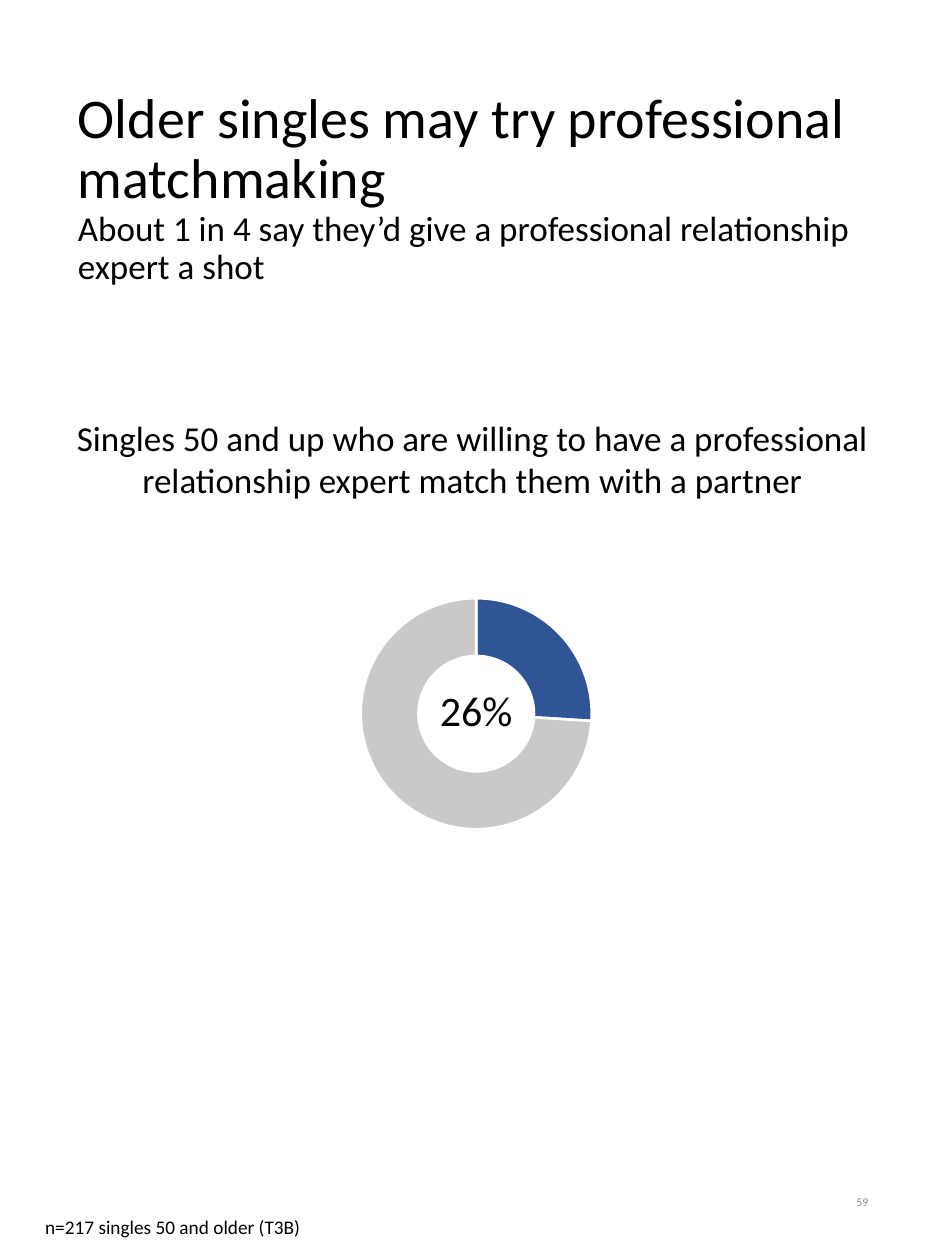
from pptx import Presentation
from pptx.chart.data import CategoryChartData
from pptx.dml.color import RGBColor
from pptx.enum.chart import XL_CHART_TYPE
from pptx.enum.text import MSO_ANCHOR, PP_ALIGN
from pptx.util import Inches, Pt

BLACK = RGBColor(0x00, 0x00, 0x00)
WHITE = RGBColor(0xFF, 0xFF, 0xFF)
GRAY = RGBColor(0x8C, 0x8C, 0x8C)
WILLING_BLUE = RGBColor(0x2F, 0x55, 0x97)
REST_GRAY = RGBColor(0xC9, 0xC9, 0xC9)
FONT = "Calibri"

prs = Presentation()
prs.slide_width, prs.slide_height = Inches(7.5), Inches(10)
slide = prs.slides.add_slide(prs.slide_layouts[6])


def add_text(text, left, top, width, height, sizes, align=PP_ALIGN.LEFT,
             anchor=MSO_ANCHOR.TOP, color=BLACK):
    """Add a one-paragraph text box; sizes holds one point size per run."""
    box = slide.shapes.add_textbox(Inches(left), Inches(top),
                                   Inches(width), Inches(height))
    frame = box.text_frame
    frame.word_wrap = True
    frame.vertical_anchor = anchor
    paragraph = frame.paragraphs[0]
    paragraph.text = text
    paragraph.alignment = align
    for run, size in zip(paragraph.runs, sizes):
        run.font.name = FONT
        run.font.size = Pt(size)
        run.font.color.rgb = color
    return paragraph


# Page number
add_text("59", 5.3, 9.27, 1.69, 0.53, [6.8], PP_ALIGN.RIGHT, MSO_ANCHOR.MIDDLE, GRAY)

# Doughnut with the share of willing singles
shares = CategoryChartData()
shares.categories = ["1", "2"]
shares.add_series("Series 1", [26, 74])
doughnut = slide.shapes.add_chart(
    XL_CHART_TYPE.DOUGHNUT, Inches(2.26), Inches(4.61), Inches(3.04), Inches(2.11), shares
).chart
doughnut.has_legend = False
doughnut.has_title = False
doughnut.font.name = FONT
doughnut.font.size = Pt(10)
doughnut.font.color.rgb = BLACK
ring = doughnut.plots[0]
ring.vary_by_categories = True
for hole in ring._element.xpath("c:holeSize"):
    hole.set("val", "64")
for index, color in enumerate([WILLING_BLUE, REST_GRAY]):
    slice_format = ring.series[0].points[index].format
    slice_format.fill.solid()
    slice_format.fill.fore_color.rgb = color
    slice_format.line.color.rgb = WHITE
    slice_format.line.width = Pt(1.5)

add_text("26%", 3.35, 5.38, 0.86, 0.63, [24], PP_ALIGN.CENTER)

# Chart heading, sample note and slide title
add_text("Singles 50 and up who are willing to have a professional relationship "
         "expert match them with a partner",
         0.43, 3.26, 6.64, 1.41, [20], PP_ALIGN.CENTER)
add_text("n=217 singles 50 and older (T3B)", 0.26, 9.6, 6.98, 0.47, [11])
title = add_text("Older singles may try professional matchmaking\v"
                 "About 1 in 4 say they’d give a professional relationship expert a shot",
                 0.52, 0.53, 6.47, 1.93, [32, 20], anchor=MSO_ANCHOR.MIDDLE)
title.line_spacing = 0.9

prs.save("out.pptx")
